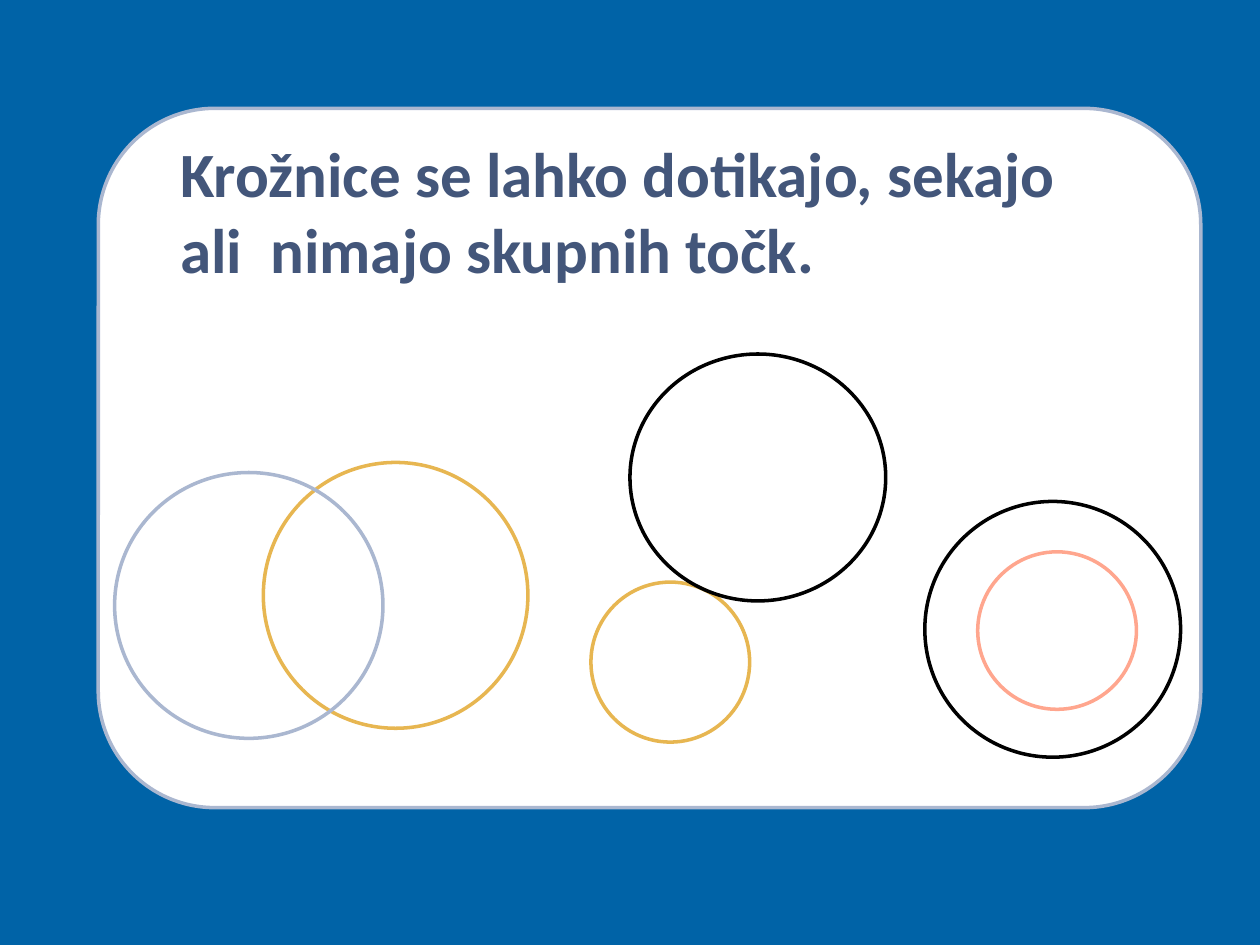
from dataclasses import dataclass

from pptx import Presentation
from pptx.dml.color import RGBColor as RGB
from pptx.enum.shapes import MSO_SHAPE as Shape
from pptx.enum.text import MSO_ANCHOR as Anchor, MSO_AUTO_SIZE as Auto, PP_ALIGN as Align
from pptx.util import Inches, Pt


@dataclass(frozen=True)
class Theme:
    back: str = "0063A7"
    white: str = "FFFFFF"
    text: str = "43567A"
    gold: str = "E7B651"
    mist: str = "AAB7D0"
    black: str = "000000"
    coral: str = "FFA68E"
    font: str = "Calibri"
    size: int = 36
    line: int = 2


THEME = Theme()


def rgb(code):
    return RGB.from_string(code)


def add_form(slide, kind, box, line, fill=None):
    form = slide.shapes.add_shape(kind, *map(Inches, box))
    form.shadow.inherit = False
    if fill:
        form.fill.solid()
        form.fill.fore_color.rgb = rgb(fill)
    else:
        form.fill.background()
    form.line.color.rgb = rgb(line)
    form.line.width = Pt(THEME.line)
    return form


def add_panel(slide, box):
    panel = add_form(slide, Shape.ROUNDED_RECTANGLE, box, THEME.mist, THEME.white)
    # The panel lies behind the title
    slide.shapes._spTree.insert(2, panel._element)


def set_title(slide, box, lines):
    title = slide.shapes.title
    title.left, title.top, title.width, title.height = map(Inches, box)
    frame = title.text_frame
    frame.word_wrap = True
    frame.auto_size = Auto.NONE
    frame.vertical_anchor = Anchor.TOP
    frame.margin_left = Inches(0.65)
    frame.margin_top = Inches(0.05)
    para = frame.paragraphs[0]
    para.alignment = Align.LEFT
    para.line_spacing = 1.0
    for i, line in enumerate(lines):
        if i:
            para.add_line_break()
        run = para.add_run()
        run.text = line
        font = run.font
        font.name, font.size, font.bold = THEME.font, Pt(THEME.size), True
        font.color.rgb = rgb(THEME.text)


def add_rings(slide, box, rings):
    """Each ring: left and top within the box, width, height, line, fill."""
    left, top = box
    for x, y, wide, high, line, fill in rings:
        add_form(slide, Shape.OVAL, (left + x, top + y, wide, high), line, fill)


def main():
    deck = Presentation()
    deck.slide_width, deck.slide_height = Inches(10), Inches(7.5)
    slide = deck.slides.add_slide(deck.slide_layouts[5])
    slide.background.fill.solid()
    slide.background.fill.fore_color.rgb = rgb(THEME.back)

    add_panel(slide, (0.78, 0.86, 8.75, 5.55))
    set_title(slide, (0.78, 1.02, 8.5, 5.37),
              ("Krožnice se lahko dotikajo, sekajo", "ali  nimajo skupnih točk."))

    # Crossing circles
    add_rings(slide, (0.91, 3.67), (
        (1.18, 0, 2.1, 2.11, THEME.gold, THEME.white),
        (0, 0.08, 2.13, 2.11, THEME.mist, None)))
    # Touching circles
    add_rings(slide, (4.69, 2.81), (
        (0, 1.81, 1.26, 1.27, THEME.gold, THEME.white),
        (0.31, 0, 2.03, 1.96, THEME.black, None)))
    # Circles with no common point
    add_rings(slide, (7.34, 3.98), (
        (0, 0, 2.03, 2.03, THEME.black, None),
        (0.42, 0.4, 1.26, 1.25, THEME.coral, THEME.white)))

    deck.save("out.pptx")


if __name__ == "__main__":
    main()
